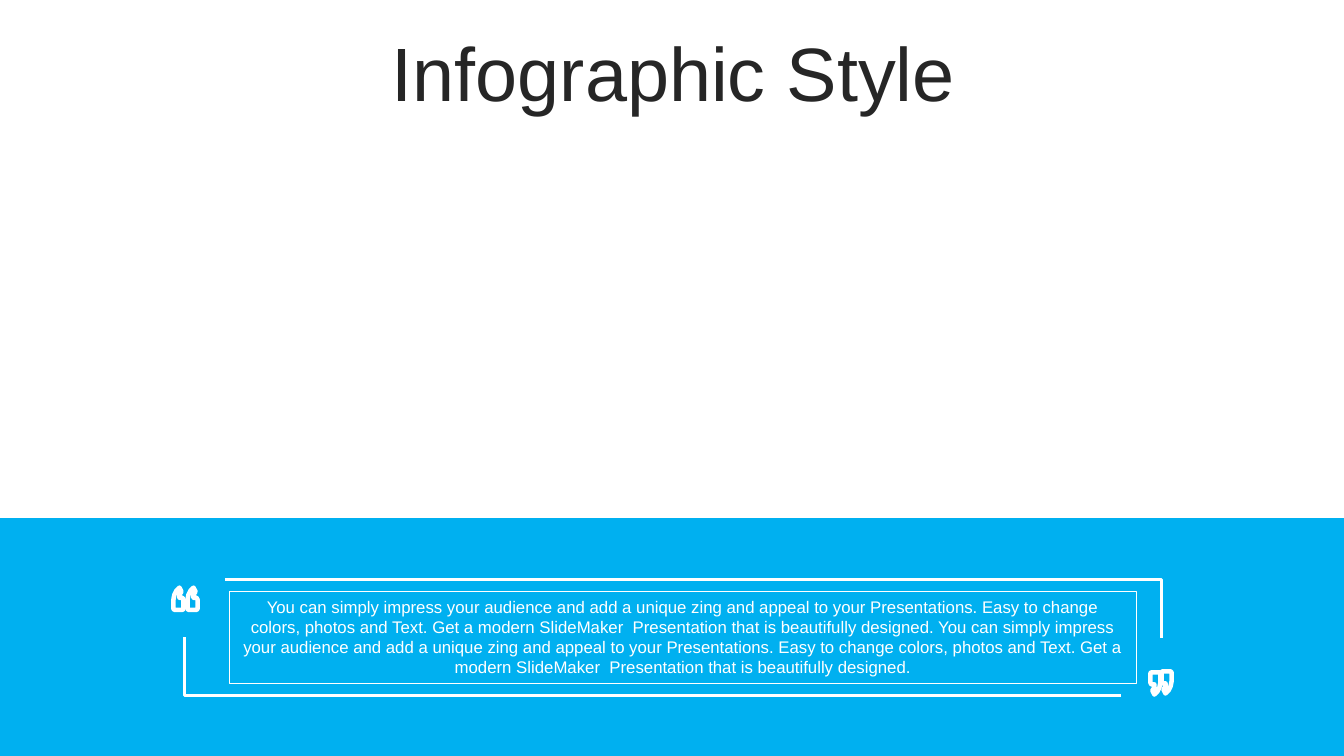
"""Build a title slide with a framed quotation on a blue band."""
import pptx
import pptx.util
import pptx.dml.color
import pptx.enum.shapes
import pptx.enum.text

Inches, Pt = pptx.util.Inches, pptx.util.Pt

COLORS = {"band": "00B0F0", "white": "FFFFFF", "title": "262626"}
FONT = "Arial"
TITLE = "Infographic Style"
SENTENCES = (
    "You can simply impress your audience and add a unique zing and appeal to your Presentations.",
    "Easy to change colors, photos and Text.",
    "Get a modern SlideMaker  Presentation that is beautifully designed.",
)
QUOTATION = " ".join(SENTENCES * 2)

MARK_OUTLINE = [
    (0.01, 0.22), (0.09, 0.22), (0.1, 0.21), (0.1, 0.12), (0.09, 0.1),
    (0.06, 0.1), (0.06, 0.07), (0.08, 0.04), (0.06, 0),
    (0.03, 0.03), (0.01, 0.07), (0, 0.12), (0, 0.21),
]
MARKS = [(1.72, 5.83, 1), (1.86, 5.83, 1), (11.62, 6.88, -1), (11.51, 6.89, -1)]
BRACKETS = [
    [(2.23, 5.75), (11.52, 5.75), (11.52, 6.33)],
    [(11.12, 6.9), (1.83, 6.9), (1.83, 6.32)],
]


def rgb(name):
    return pptx.dml.color.RGBColor.from_string(COLORS[name])


def style_text(paragraph, size, color):
    paragraph.alignment = pptx.enum.text.PP_ALIGN.CENTER
    paragraph.font.name = FONT
    paragraph.font.size = Pt(size)
    paragraph.font.color.rgb = rgb(color)


def outline(shape, width):
    shape.shadow.inherit = False
    shape.fill.background()
    shape.line.color.rgb = rgb("white")
    shape.line.width = Pt(width)


def draw_path(slide, points, width, close):
    corners = [(Inches(x), Inches(y)) for x, y in points]
    builder = slide.shapes.build_freeform(*corners[0])
    builder.add_line_segments(corners[1:], close=close)
    outline(builder.convert_to_shape(), width)


def add_rectangle(slide, *box):
    rectangle = pptx.enum.shapes.MSO_SHAPE.RECTANGLE
    return slide.shapes.add_shape(rectangle, *map(Inches, box))


def main():
    deck = pptx.Presentation()
    deck.slide_width, deck.slide_height = Inches(13.33), Inches(7.5)
    slide = deck.slides.add_slide(deck.slide_layouts[5])

    title = slide.shapes.title
    title.left, title.top = Inches(0.35), Inches(0.37)
    title.width, title.height = Inches(12.66), Inches(0.79)
    title.text_frame.text = TITLE
    title.text_frame.vertical_anchor = pptx.enum.text.MSO_ANCHOR.MIDDLE
    title.text_frame.auto_size = pptx.enum.text.MSO_AUTO_SIZE.NONE
    heading = title.text_frame.paragraphs[0]
    heading.line_spacing = 0.9
    style_text(heading, 54, "title")

    band = add_rectangle(slide, 0, 5.14, 13.33, 2.36)
    band.shadow.inherit = False
    band.fill.solid()
    band.fill.fore_color.rgb = rgb("band")
    band.line.fill.background()

    quotation = add_rectangle(slide, 2.28, 5.87, 8.99, 0.91)
    outline(quotation, 0.75)
    frame = quotation.text_frame
    frame.word_wrap = True
    frame.vertical_anchor = pptx.enum.text.MSO_ANCHOR.TOP
    frame.auto_size = pptx.enum.text.MSO_AUTO_SIZE.SHAPE_TO_FIT_TEXT
    frame.text = QUOTATION
    style_text(frame.paragraphs[0], 12, "white")

    for left, top, direction in MARKS:
        mark = [(left + direction * x, top + direction * y) for x, y in MARK_OUTLINE]
        draw_path(slide, mark, 3.25, True)
    for bracket in BRACKETS:
        draw_path(slide, bracket, 2, False)

    deck.save("out.pptx")


if __name__ == "__main__":
    main()
